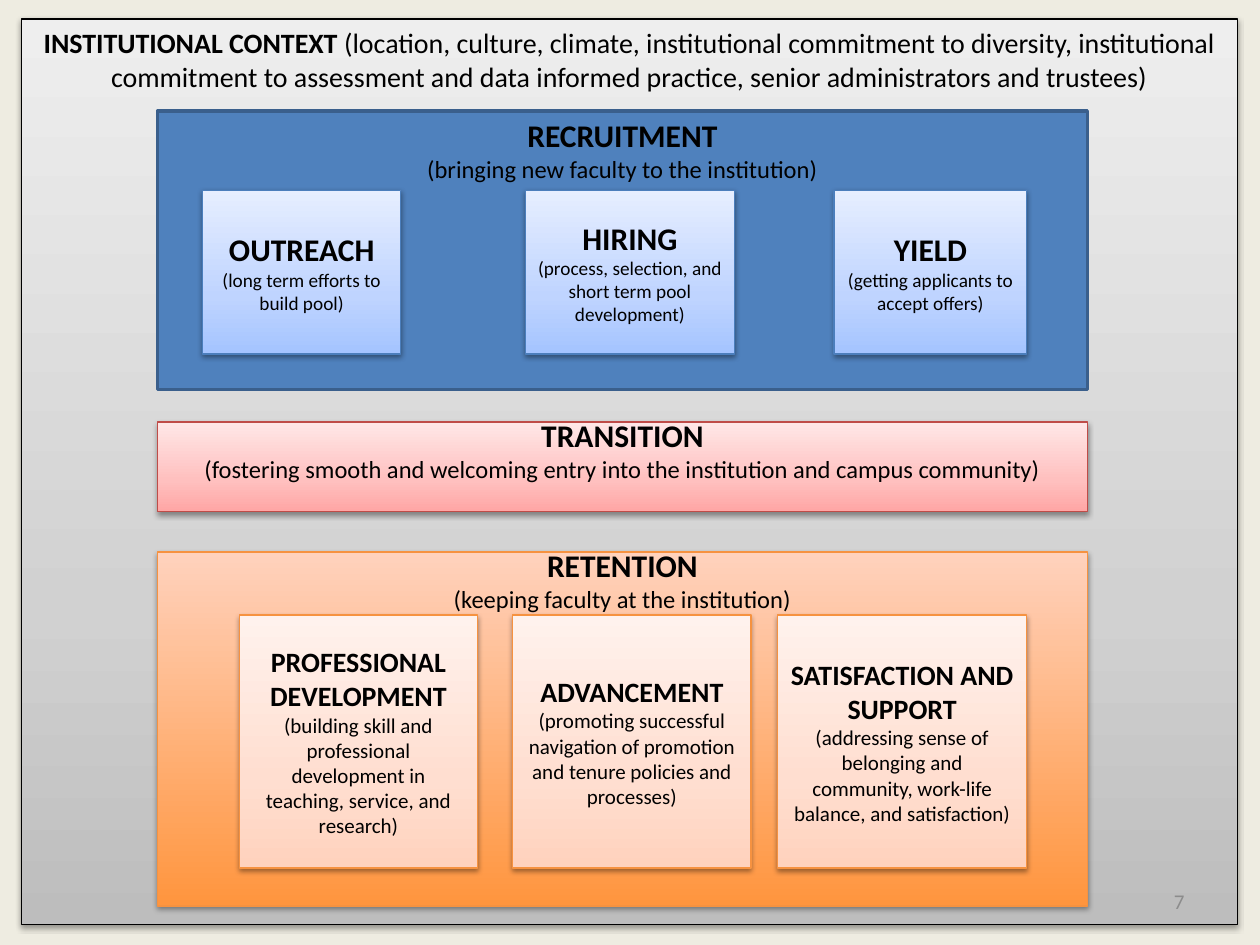
from lxml import etree
from pptx import Presentation
from pptx.dml.color import RGBColor
from pptx.enum.shapes import MSO_SHAPE
from pptx.enum.text import MSO_ANCHOR, PP_ALIGN
from pptx.oxml.ns import qn
from pptx.util import Inches, Pt

RECT = MSO_SHAPE.RECTANGLE
MID = MSO_ANCHOR.MIDDLE
CENTER, RIGHT = PP_ALIGN.CENTER, PP_ALIGN.RIGHT

THEME = {
    "font": "Calibri",
    "back": "EEECE1",
    "ink": "000000",
    "page": "8C8C8C",
    "num": 12,
    "frame": {"fill": ((0, "BDBDBD"), (35, "D1D1D1"), (100, "EEEEEE")),
              "line": "000000", "size": (16, 16)},
    "blue": {"fill": "4F81BD", "line": "3A5F8C", "width": 2, "size": (18, 14)},
    "pink": {"fill": ((0, "FFA6A5"), (35, "FFC0BF"), (100, "FFE7E7")),
             "line": "BF4C48", "size": (18, 14)},
    "orange": {"fill": ((0, "FF953E"), (100, "FFD2BD")),
               "line": "F69240", "size": (18, 14)},
    "sky": {"fill": ((0, "A4C4FF"), (35, "BFD4FF"), (100, "E6EEFF")),
            "line": "4B7EBC", "size": (18, 11)},
    "peach": {"fill": ((0, "FFD2BD"), (35, "FFDED0"), (100, "FFF2ED")),
              "line": "F69240", "size": (16, 12)},
}

CONTEXT = ("INSTITUTIONAL CONTEXT ",
           "(location, culture, climate, institutional commitment to diversity, "
           "institutional commitment to assessment and data informed practice, "
           "senior administrators and trustees)")

STAGES = [
    {"text": ("RECRUITMENT", "(bringing new faculty to the institution)"),
     "look": "blue", "top": 0.88, "high": 2.21, "head": 0.62,
     "card": "sky", "row": (1.51, 1.3),
     "parts": [
         (1.61, 1.57, "OUTREACH", "(long term efforts to build pool)"),
         (4.17, 1.66, "HIRING",
          "(process, selection, and short term pool development)"),
         (6.62, 1.53, "YIELD", "(getting applicants to accept offers)")]},
    {"text": ("TRANSITION", "(fostering smooth and welcoming entry into "
              "the institution and campus community)"),
     "look": "pink", "top": 3.35, "high": 0.71, "head": 0.44, "parts": []},
    {"text": ("RETENTION", "(keeping faculty at the institution)"),
     "look": "orange", "top": 4.38, "high": 2.81, "head": 0.44,
     "card": "peach", "row": (4.88, 2.01),
     "parts": [
         (1.9, 1.89, "PROFESSIONAL DEVELOPMENT",
          "(building skill and professional development in teaching, "
          "service, and research)"),
         (4.07, 1.89, "ADVANCEMENT",
          "(promoting successful navigation of promotion and tenure "
          "policies and processes)"),
         (6.17, 1.98, "SATISFACTION AND SUPPORT",
          "(addressing sense of belonging and community, work-life "
          "balance, and satisfaction)")]},
]
LEFT, WIDE = 1.25, 7.38


def rgb(code):
    return RGBColor.from_string(code)


def add_tag(root, name, **attrs):
    return etree.SubElement(root, qn(name), attrs)


def add_run(para, text, size, bold=False, color=THEME["ink"]):
    run = para.add_run()
    run.text = text
    font = run.font
    font.name, font.size, font.bold = THEME["font"], Pt(size), bold
    font.color.rgb = rgb(color)


def paint(shape, stops):
    if isinstance(stops, str):
        shape.fill.solid()
        shape.fill.fore_color.rgb = rgb(stops)
        return
    shape.fill.gradient()
    shape.fill.gradient_angle = 90
    ramp = next(shape.element.spPr.iter(qn("a:gsLst")))
    for stop in list(ramp):
        ramp.remove(stop)
    for pos, color in stops:
        stop = add_tag(ramp, "a:gs", pos=str(pos * 1000))
        add_tag(stop, "a:srgbClr", val=color)


def add_shade(shape):
    root = shape.element.spPr.find(qn("a:effectLst"))
    shade = add_tag(root, "a:outerShdw", blurRad=str(Pt(3.1)),
                    dist=str(Pt(1.6)), dir="5400000", rotWithShape="0")
    color = add_tag(shade, "a:srgbClr", val=THEME["ink"])
    add_tag(color, "a:alpha", val="38000")


def add_box(slide, at, look, text, head=None, split=True):
    style = THEME[look]
    shape = slide.shapes.add_shape(RECT, *map(Inches, at))
    paint(shape, style["fill"])
    shape.line.color.rgb = rgb(style["line"])
    shape.line.width = Pt(style.get("width", 0.75))
    shape.shadow.inherit = False
    if not isinstance(style["fill"], str):
        add_shade(shape)
    frame = shape.text_frame
    frame.word_wrap = True
    frame.vertical_anchor = MID
    if head:
        frame.margin_top = 0
        frame.margin_bottom = Inches(at[3] - head)
    para = frame.paragraphs[0]
    para.alignment = CENTER
    title, note = text
    big, small = style["size"]
    add_run(para, title, big, bold=True)
    if split:
        para = frame.add_paragraph()
        para.alignment = CENTER
    add_run(para, note, small)


def add_page(slide, text):
    box = slide.shapes.add_textbox(*map(Inches, (7.17, 6.95, 2.33, 0.4)))
    frame = box.text_frame
    frame.word_wrap = True
    frame.vertical_anchor = MID
    para = frame.paragraphs[0]
    para.alignment = RIGHT
    add_run(para, text, THEME["num"], color=THEME["page"])


def main():
    deck = Presentation()
    deck.slide_width, deck.slide_height = Inches(10), Inches(7.5)
    slide = deck.slides.add_slide(deck.slide_layouts[6])
    slide.background.fill.solid()
    slide.background.fill.fore_color.rgb = rgb(THEME["back"])
    add_box(slide, (0.17, 0.15, 9.65, 7.19), "frame", CONTEXT,
            head=0.64, split=False)
    for stage in STAGES:
        add_box(slide, (LEFT, stage["top"], WIDE, stage["high"]),
                stage["look"], stage["text"], head=stage["head"])
        for left, wide, *text in stage["parts"]:
            top, high = stage["row"]
            add_box(slide, (left, top, wide, high), stage["card"], text)
    add_page(slide, "7")
    deck.save("out.pptx")


if __name__ == "__main__":
    main()
